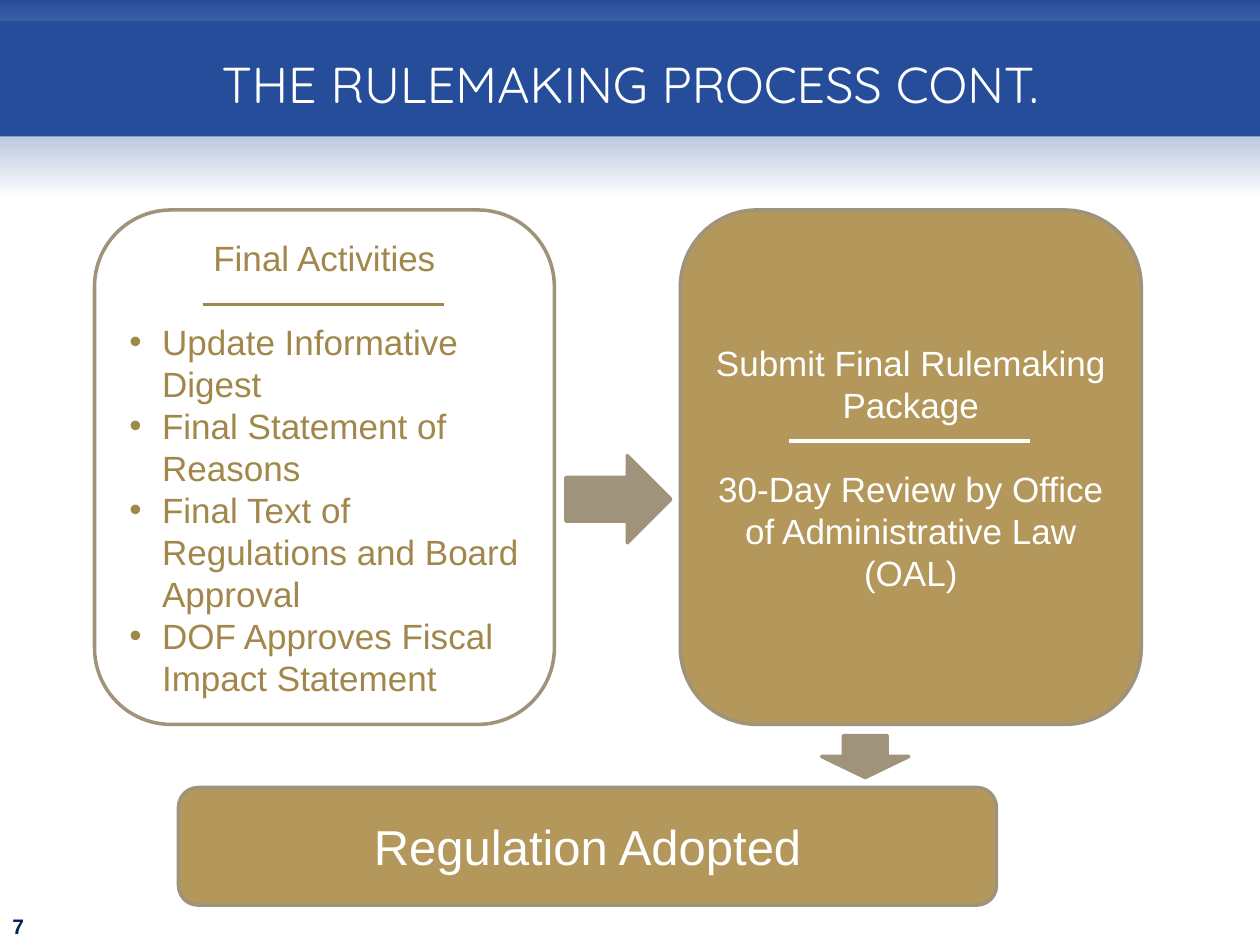
from lxml import etree
from pptx import Presentation
from pptx.dml.color import RGBColor
from pptx.enum.shapes import MSO_CONNECTOR, MSO_SHAPE
from pptx.enum.text import MSO_ANCHOR, MSO_AUTO_SIZE, PP_ALIGN
from pptx.oxml.ns import qn
from pptx.util import Inches, Pt

ROUNDED = MSO_SHAPE.ROUNDED_RECTANGLE
ARROW = MSO_SHAPE.RIGHT_ARROW
STRAIGHT = MSO_CONNECTOR.STRAIGHT
MIDDLE, BOTTOM = MSO_ANCHOR.MIDDLE, MSO_ANCHOR.BOTTOM
LEFT, CENTER = PP_ALIGN.LEFT, PP_ALIGN.CENTER
FIXED = MSO_AUTO_SIZE.NONE

COLORS = {
    "blue": "264D9A",
    "navy": "002060",
    "white": "FFFFFF",
    "gold": "B4975A",
    "bronze": "A2874B",
    "taupe": "A0937C",
}
COLUMNS, ROWS = 120, 90
TITLE_ONLY = 5


class RulemakingSlide:
    font = "Arial"
    title_font = "Quicksand"
    text_size = 20
    line_pitch = Pt(24)
    bullet_indent = Inches(0.26)

    def __init__(self, deck):
        self.page = deck.slides.add_slide(deck.slide_layouts[TITLE_ONLY])
        self.column = deck.slide_width / COLUMNS
        self.row = deck.slide_height / ROWS

    def color(self, name):
        return RGBColor.from_string(COLORS[name])

    def place(self, left, top, width, height):
        return (round(left * self.column), round(top * self.row),
                round(width * self.column), round(height * self.row))

    def background(self, first, last, reach):
        fill = self.page.background.fill
        fill.gradient()
        fill.gradient_angle = 270
        for stop, name, position in zip(fill.gradient_stops, (first, last), (0, reach)):
            stop.color.rgb = self.color(name)
            stop.position = position

    def add_span(self, para, text, color, size=None, font=None, align=CENTER):
        para.alignment = align
        span = para.add_run()
        span.text = text
        span.font.name = font or self.font
        span.font.size = Pt(size or self.text_size)
        span.font.color.rgb = self.color(color)
        return span

    def title(self, text, area):
        box = self.page.shapes.title
        box.left, box.top, box.width, box.height = self.place(*area)
        box.fill.solid()
        box.fill.fore_color.rgb = self.color("blue")
        frame = box.text_frame
        frame.auto_size = FIXED
        frame.vertical_anchor = MIDDLE
        frame.margin_top = frame.margin_bottom = 0
        span = self.add_span(frame.paragraphs[0], text, "white", 36, self.title_font)
        span.font._element.set("cap", "small")

    def page_number(self, text, area):
        frame = self.page.shapes.add_textbox(*self.place(*area)).text_frame
        frame.word_wrap = True
        frame.vertical_anchor = BOTTOM
        span = self.add_span(frame.paragraphs[0], text, "navy", 12, align=LEFT)
        span.font.bold = True
        span.font._element.set("spc", "80")

    def shape(self, kind, area, fill=None):
        box = self.page.shapes.add_shape(kind, *self.place(*area))
        box.shadow.inherit = False
        if fill:
            box.fill.solid()
            box.fill.fore_color.rgb = self.color(fill)
        else:
            box.fill.background()
        box.line.color.rgb = self.color("taupe")
        box.line.width = Pt(2)
        return box

    def card(self, area, heading, color, fill=None, size=None):
        frame = self.shape(ROUNDED, area, fill).text_frame
        frame.word_wrap = True
        frame.vertical_anchor = MIDDLE
        self.add_span(frame.paragraphs[0], heading, color, size)
        return frame

    def step(self, area, heading, details, color, fill=None, bulleted=False):
        frame = self.card(area, heading, color, fill)
        for text in details:
            para = frame.add_paragraph()
            if bulleted:
                self.bullet(para)
            self.add_span(para, text, color, align=LEFT if bulleted else CENTER)
        for para in frame.paragraphs:
            para.line_spacing = self.line_pitch
        frame.paragraphs[1].space_before = self.line_pitch

    def bullet(self, para):
        props = para._p.get_or_add_pPr()
        props.set("marL", str(self.bullet_indent))
        props.set("indent", str(-self.bullet_indent))
        etree.SubElement(props, qn("a:buFont")).set("typeface", self.font)
        etree.SubElement(props, qn("a:buChar")).set("char", "•")

    def rule(self, left, top, width, color):
        x, y, length, _ = self.place(left, top, width, 0)
        line = self.page.shapes.add_connector(STRAIGHT, x, y, x + length, y)
        line.line.color.rgb = self.color(color)
        line.line.width = Pt(2.25)
        etree.SubElement(line._element.spPr, qn("a:effectLst"))

    def arrow(self, area, rotation=0):
        self.shape(ARROW, area, "taupe").rotation = rotation


def main():
    deck = Presentation()
    deck.slide_width, deck.slide_height = Inches(10), Inches(7.5)
    slide = RulemakingSlide(deck)
    slide.background("blue", "white", 0.21)
    slide.title("the rulemaking process cont.", (0, 2, COLUMNS, 11))
    slide.page_number("7", (0, 84, 25, 6))

    slide.step((9, 20, 43.8, 49), "Final Activities", (
        "Update Informative Digest",
        "Final Statement of Reasons",
        "Final Text of Regulations and Board Approval",
        "DOF Approves Fiscal Impact Statement",
    ), "bronze", bulleted=True)
    slide.rule(19.3, 29, 23, "bronze")

    slide.step((64.8, 20, 43.9, 49), "Submit Final Rulemaking Package", (
        "30-Day Review by Office of Administrative Law (OAL)",
    ), "white", "gold")
    slide.rule(75.1, 42, 23, "white")

    slide.card((17, 75, 77.9, 11.2), "Regulation Adopted", "white", "gold", 28)
    slide.arrow((53.9, 43.4, 10, 8.3))
    slide.arrow((80.4, 67.9, 4, 8.3), 90)
    deck.save("out.pptx")


if __name__ == "__main__":
    main()
